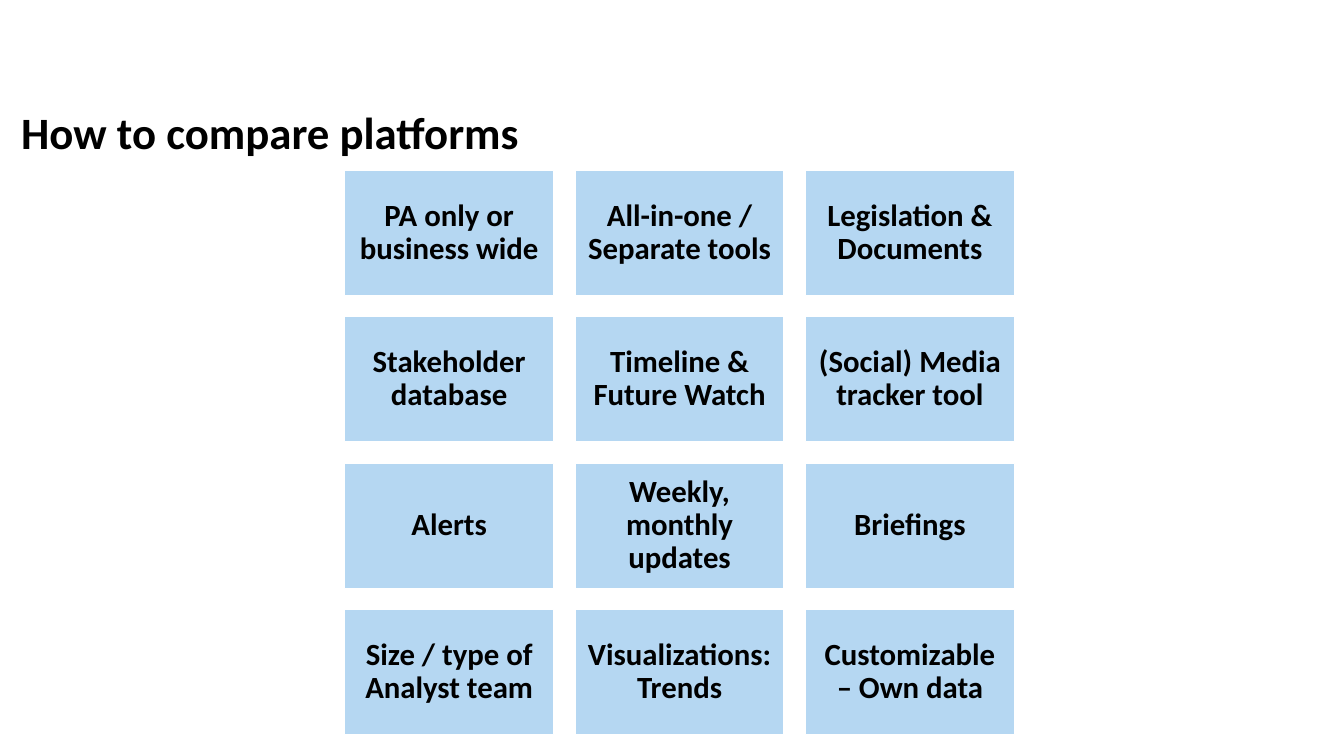
from pptx import Presentation
from pptx.dml.color import RGBColor
from pptx.enum.shapes import MSO_SHAPE
from pptx.enum.text import MSO_ANCHOR, PP_ALIGN
from pptx.util import Inches, Pt

TITLE = "How to compare platforms"
CRITERIA = [
    ["PA only or business wide", "All-in-one / Separate tools", "Legislation & Documents"],
    ["Stakeholder database", "Timeline & Future Watch", "(Social) Media tracker tool"],
    ["Alerts", "Weekly, monthly updates", "Briefings"],
    ["Size / type of Analyst team", "Visualizations: Trends", "Customizable – Own data"],
]
COLORS = {"tile": "B5D7F2", "border": "FFFFFF", "text": "000000"}
FONT = "Calibri"
LEFT, TOP = 3.42, 1.69
TILE_W, TILE_H = 2.07, 1.24
STEP_X, STEP_Y = 2.285, 1.453
INSET = Inches(0.09)


def color(name):
    return RGBColor.from_string(COLORS[name])


def write(tf, text, size, align):
    tf.word_wrap = True
    tf.vertical_anchor = MSO_ANCHOR.MIDDLE
    p = tf.paragraphs[0]
    p.alignment = align
    p.line_spacing = 0.9
    r = p.add_run()
    r.text = text
    r.font.name = FONT
    r.font.size = Pt(size)
    r.font.bold = True
    r.font.color.rgb = color("text")


def add_tile(s, text, x, y):
    sp = s.shapes.add_shape(MSO_SHAPE.RECTANGLE, Inches(x), Inches(y),
                            Inches(TILE_W), Inches(TILE_H))
    sp.shadow.inherit = False
    sp.fill.solid()
    sp.fill.fore_color.rgb = color("tile")
    sp.line.color.rgb = color("border")
    sp.line.width = Pt(1)
    tf = sp.text_frame
    tf.margin_left = tf.margin_right = tf.margin_top = tf.margin_bottom = INSET
    write(tf, text, 22, PP_ALIGN.CENTER)


def main():
    prs = Presentation()
    prs.slide_width, prs.slide_height = Inches(13.33), Inches(7.5)
    s = prs.slides.add_slide(prs.slide_layouts[5])

    title = s.shapes.title
    title.left, title.top = Inches(0.11), Inches(0.91)
    title.width, title.height = Inches(11.5), Inches(0.86)
    write(title.text_frame, TITLE, 32, PP_ALIGN.LEFT)

    for row, labels in enumerate(CRITERIA):
        for col, label in enumerate(labels):
            add_tile(s, label, LEFT + col * STEP_X, TOP + row * STEP_Y)

    prs.save("out.pptx")


if __name__ == "__main__":
    main()
